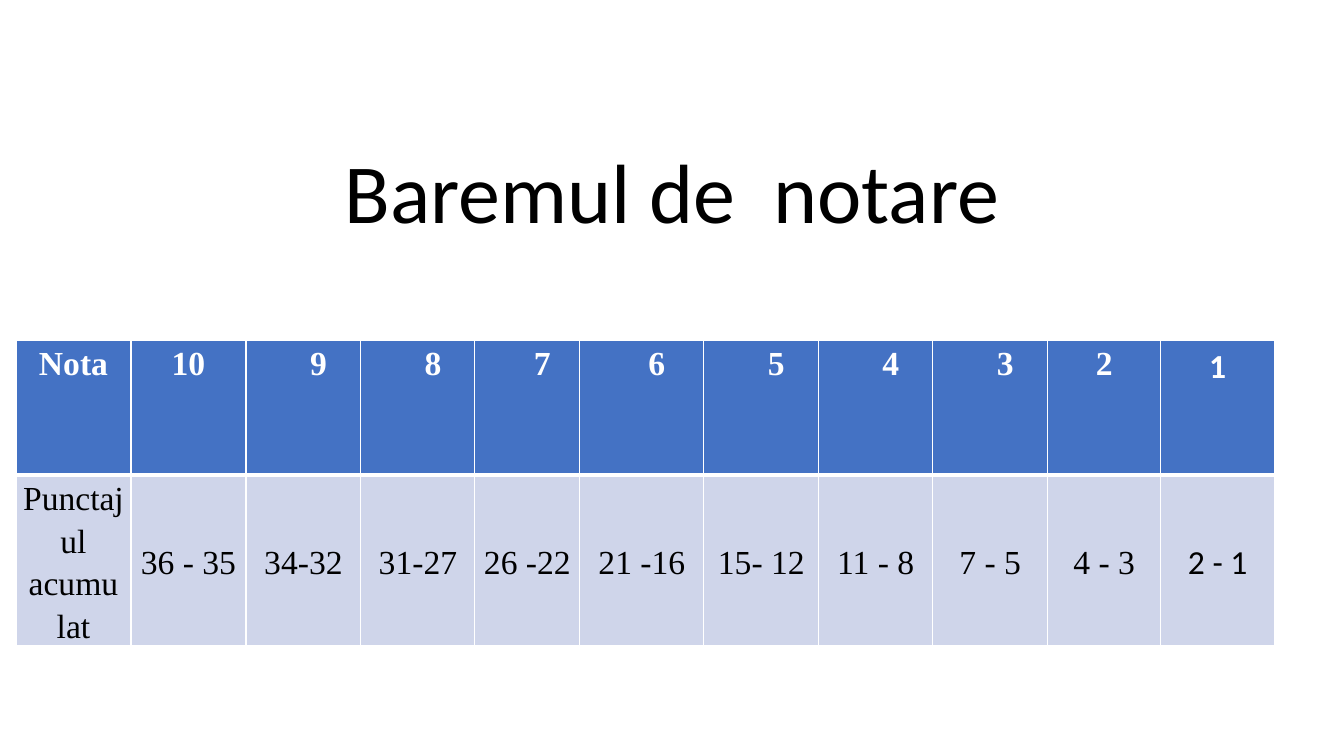
"""Builds a slide with the grading scale: marks and the points they need."""
from lxml.etree import SubElement
from pptx import Presentation
from pptx.dml.color import RGBColor
from pptx.enum.text import MSO_ANCHOR, PP_ALIGN
from pptx.oxml import parse_xml
from pptx.oxml.ns import nsdecls, qn
from pptx.util import Pt

PX = 914400 / 100.8
BLACK = RGBColor(0x00, 0x00, 0x00)
WHITE = RGBColor(0xFF, 0xFF, 0xFF)
BLUE = RGBColor(0x44, 0x72, 0xC4)
PALE = RGBColor(0xCF, 0xD5, 0xEA)

MARKS = ["Nota", "10", "9", "8", "7", "6", "5", "4", "3", "2", "1"]
POINTS = ["Punctajul\nacumu\nlat", "36 - 35", "34-32", "31-27", "26 -22", "21 -16",
          "15- 12", "11 - 8", "7 - 5", "4 - 3", "2 - 1"]
WIDTHS = [115, 115, 115, 114, 105, 124, 115, 114, 115, 113, 114]
HEIGHTS = [135, 133]
INDENTED = range(2, 9)


def px(n):
    return round(n * PX)


def set_borders(cell, widths):
    tcPr = cell._tc.get_or_add_tcPr()
    for i, (side, width) in enumerate(widths.items()):
        ln = parse_xml(f'<a:ln{side} {nsdecls("a")} w="{Pt(width)}"/>')
        fill = SubElement(ln, qn("a:solidFill"))
        SubElement(fill, qn("a:srgbClr"), val=str(WHITE))
        tcPr.insert(i, ln)


prs = Presentation()
prs.slide_width, prs.slide_height = px(1344), px(756)
s = prs.slides.add_slide(prs.slide_layouts[5])

title = s.shapes.title
title.left, title.top, title.width, title.height = px(168), px(124), px(1008), px(123)
tf = title.text_frame
tf.text = "Baremul de  notare"
tf.vertical_anchor = MSO_ANCHOR.BOTTOM
p = tf.paragraphs[0]
p.alignment = PP_ALIGN.CENTER
p.line_spacing = 0.9
font = p.runs[0].font
font.name, font.size, font.color.rgb = "Calibri", Pt(60), BLACK

table = s.shapes.add_table(2, len(MARKS), px(16), px(340), px(sum(WIDTHS)), px(sum(HEIGHTS))).table
for column, width in zip(table.columns, WIDTHS):
    column.width = px(width)
for row, height in zip(table.rows, HEIGHTS):
    row.height = px(height)

for r, texts in enumerate([MARKS, POINTS]):
    header = r == 0
    for c, text in enumerate(texts):
        cell = table.cell(r, c)
        cell.margin_left = cell.margin_right = px(7)
        cell.margin_top = cell.margin_bottom = 0
        cell.vertical_anchor = MSO_ANCHOR.TOP if header or c == 0 else MSO_ANCHOR.MIDDLE
        cell.fill.solid()
        cell.fill.fore_color.rgb = BLUE if header else PALE
        set_borders(cell, {"L": 1, "R": 1, "T": 1 if header else 3, "B": 3 if header else 1})
        cell.text_frame.text = text
        for p in cell.text_frame.paragraphs:
            p.alignment = PP_ALIGN.CENTER
            p.line_spacing = 1.15
            if header and c in INDENTED:
                p._p.get_or_add_pPr().set("indent", str(px(30)))
            font = p.runs[0].font
            font.name = "Calibri" if c == len(MARKS) - 1 else "Times New Roman"
            font.size, font.bold = Pt(24), header
            font.color.rgb = WHITE if header else BLACK

prs.save("out.pptx")
